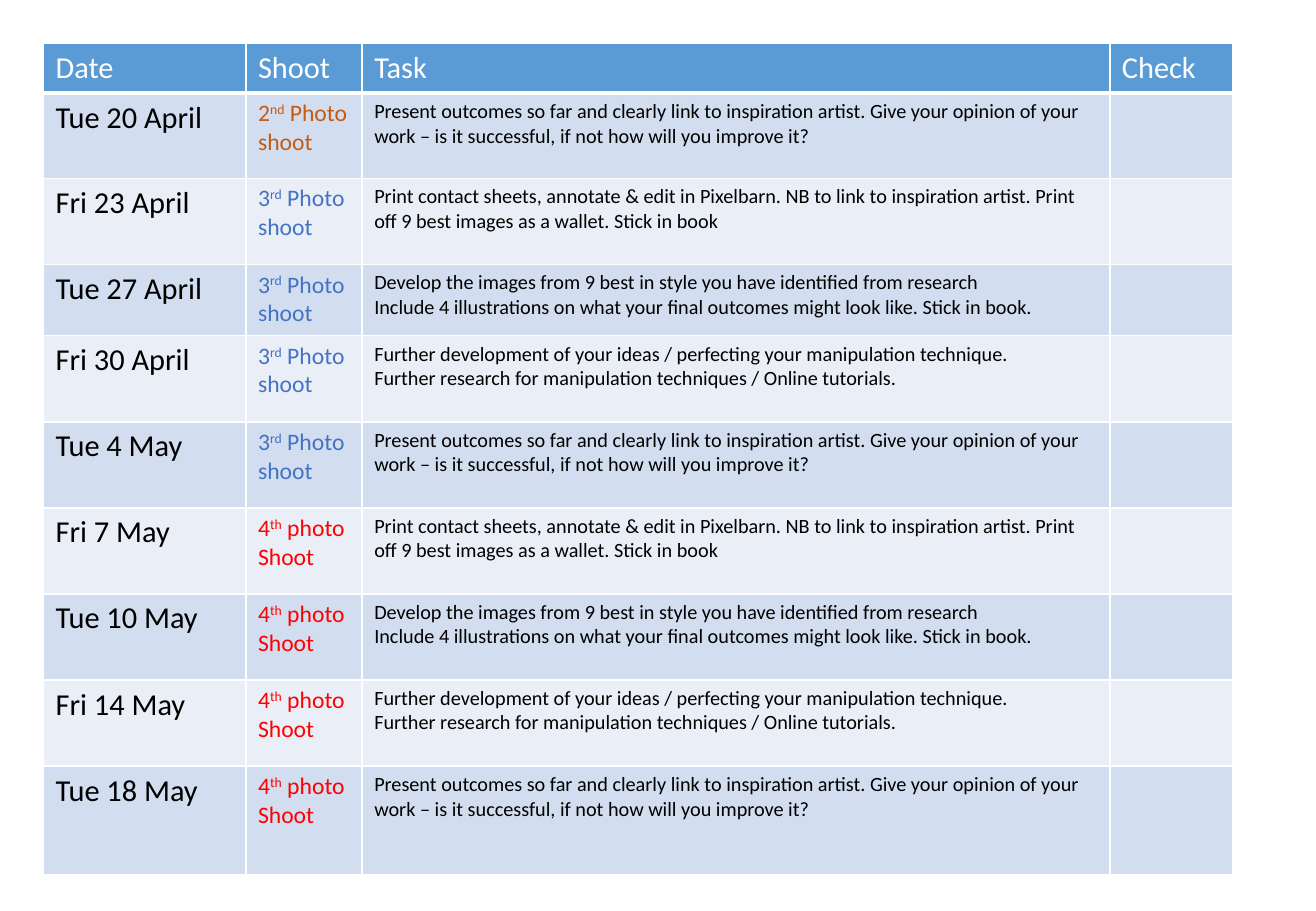
from dataclasses import dataclass

from lxml import etree
from pptx import Presentation
from pptx.dml.color import RGBColor
from pptx.oxml.ns import qn
from pptx.util import Cm, Pt

FONT = "Calibri"
WHITE, BLACK = "FFFFFF", "000000"
HEAD, BANDS = "5B9BD5", ("D2DEEF", "EAEFF7")
TITLES = ("Date", "Shoot", "Task", "Check")
WIDTHS = (4.23, 2.43, 15.63, 2.57)
HEAD_H = 1.04


@dataclass(frozen=True)
class Shoot:
    num: str
    suffix: str
    name: str
    color: str


@dataclass(frozen=True)
class Lesson:
    date: str
    shoot: Shoot
    task: str
    height: float = 1.8


SECOND = Shoot("2", "nd", " Photo shoot", "C55A11")
THIRD = Shoot("3", "rd", " Photo shoot", "4472C4")
FOURTH = Shoot("4", "th", " photo Shoot", "FF0000")

PRESENT = (
    "Present outcomes so far and clearly link to inspiration artist. "
    "Give your opinion of your work – is it successful, "
    "if not how will you improve it?"
)
PRINT = (
    "Print contact sheets, annotate & edit in Pixelbarn. "
    "NB to link to inspiration artist. "
    "Print off 9 best images as a wallet. Stick in book"
)
DEVELOP = (
    "Develop the images from 9 best in style you have identified from research\n"
    "Include 4 illustrations on what your final outcomes might look like. "
    "Stick in book."
)
FURTHER = (
    "Further development of your ideas / perfecting your manipulation technique.\n"
    "Further research for manipulation techniques / Online tutorials."
)

LESSONS = (
    Lesson("Tue 20 April", SECOND, PRESENT, 1.78),
    Lesson("Fri 23 April", THIRD, PRINT),
    Lesson("Tue 27 April", THIRD, DEVELOP, 1.49),
    Lesson("Fri 30 April", THIRD, FURTHER),
    Lesson("Tue 4 May", THIRD, PRESENT),
    Lesson("Fri 7 May", FOURTH, PRINT),
    Lesson("Tue 10 May", FOURTH, DEVELOP),
    Lesson("Fri 14 May", FOURTH, FURTHER),
    Lesson("Tue 18 May", FOURTH, PRESENT, 2.28),
)


def rgb(code: str) -> RGBColor:
    return RGBColor.from_string(code)


def write(para, text: str, *, size: float = 18, color: str = BLACK,
          raised: bool = False) -> None:
    run = para.add_run()
    run.text = text
    font = run.font
    font.name, font.size, font.bold = FONT, Pt(size), False
    font.color.rgb = rgb(color)
    if raised:
        run._r.get_or_add_rPr().set("baseline", "30000")


def paint(cell, fill: str, base: float = 1) -> None:
    """Fill a cell and edge it in white, with a bottom edge of base points."""
    props = cell._tc.get_or_add_tcPr()
    for side, width in (("L", 1), ("R", 1), ("T", 1), ("B", base)):
        line = etree.SubElement(props, qn(f"a:ln{side}"), w=str(Pt(width)))
        solid = etree.SubElement(line, qn("a:solidFill"))
        etree.SubElement(solid, qn("a:srgbClr"), val=WHITE)
    cell.fill.solid()
    cell.fill.fore_color.rgb = rgb(fill)


def fill_row(cells, lesson: Lesson) -> None:
    date, shoot, task = (cells[i].text_frame for i in range(3))
    write(date.paragraphs[0], lesson.date)
    kind = lesson.shoot
    for text, raised in ((kind.num, False), (kind.suffix, True), (kind.name, False)):
        write(shoot.paragraphs[0], text, size=14, color=kind.color, raised=raised)
    for i, text in enumerate(lesson.task.split("\n")):
        para = task.add_paragraph() if i else task.paragraphs[0]
        write(para, text, size=12)


def main() -> None:
    deck = Presentation()
    deck.slide_width, deck.slide_height = Cm(27.51), Cm(19.05)
    slide = deck.slides.add_slide(deck.slide_layouts[6])
    heights = [HEAD_H] + [lesson.height for lesson in LESSONS]
    table = slide.shapes.add_table(
        len(heights), len(WIDTHS), Cm(0.91), Cm(0.91),
        Cm(sum(WIDTHS)), Cm(sum(heights))).table
    for col, width in zip(table.columns, WIDTHS):
        col.width = Cm(width)
    for row, height in zip(table.rows, heights):
        row.height = Cm(height)

    for cell, title in zip(table.rows[0].cells, TITLES):
        paint(cell, HEAD, base=3)
        write(cell.text_frame.paragraphs[0], title, color=WHITE)
    for i, lesson in enumerate(LESSONS):
        cells = list(table.rows[i + 1].cells)
        for cell in cells:
            paint(cell, BANDS[i % 2])
        fill_row(cells, lesson)
    deck.save("out.pptx")


if __name__ == "__main__":
    main()
